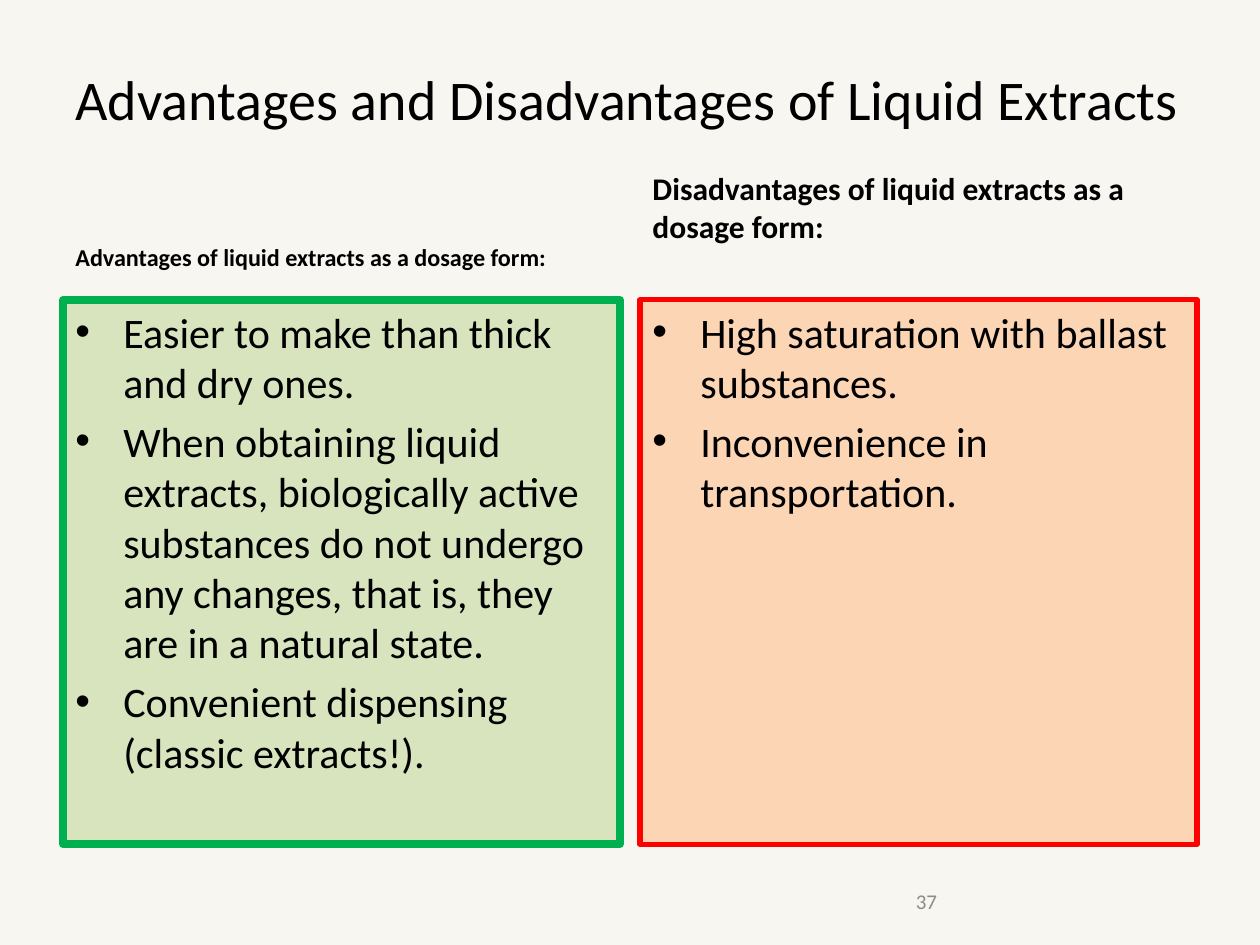
import pptx
import pptx.util
import pptx.dml.color
import pptx.enum.shapes
import pptx.enum.text
from lxml import etree

WIDTH, HEIGHT = 10, 7.5
MARGIN = 0.05 * WIDTH
GAP = 0.016 * WIDTH
COLUMN = (WIDTH - 2 * MARGIN - GAP) / 2
PANEL_TOP, PANEL_HEIGHT = 2.38, 4.32
INDENT = 0.38
FONT = "Calibri"
ANCHOR = pptx.enum.text.MSO_ANCHOR

COLUMNS = [
    dict(
        heading="Advantages of liquid extracts as a dosage form:",
        heading_size=13.8, heading_height=0.82, heading_lift=0.23,
        fill="D7E4BD", border="00B050", border_width=4.5,
        points=[
            "Easier to make than thick and dry ones.",
            "When obtaining liquid extracts, biologically active substances "
            "do not undergo any changes, that is, they are in a natural state.",
            "Convenient dispensing (classic extracts!).",
        ],
    ),
    dict(
        heading="Disadvantages of liquid extracts as a dosage form:",
        heading_size=18, heading_height=0.7, heading_lift=0.44,
        fill="FCD5B5", border="FF0000", border_width=3,
        points=[
            "High saturation with ballast substances.",
            "Inconvenience in transportation.",
        ],
    ),
]


def color(value):
    return pptx.dml.color.RGBColor.from_string(value)


def inches(*values):
    return [pptx.util.Inches(value) for value in values]


def add_bullet(para):
    properties = para._p.get_or_add_pPr()
    properties.set("marL", str(pptx.util.Inches(INDENT)))
    properties.set("indent", str(-pptx.util.Inches(INDENT)))
    namespace = properties.nsmap["a"]
    font = etree.SubElement(properties, f"{{{namespace}}}buFont")
    font.set("typeface", "Arial")
    mark = etree.SubElement(properties, f"{{{namespace}}}buChar")
    mark.set("char", "•")


def write_text(shape, lines, size, fill="000000", bold=False,
               anchor=ANCHOR.TOP, bottom=0.05, bullets=False):
    frame = shape.text_frame
    frame.word_wrap = True
    frame.auto_size = pptx.enum.text.MSO_AUTO_SIZE.NONE
    frame.vertical_anchor = anchor
    frame.margin_bottom = pptx.util.Inches(bottom)
    for number, line in enumerate(lines):
        para = frame.add_paragraph() if number else frame.paragraphs[0]
        para.alignment = pptx.enum.text.PP_ALIGN.LEFT
        if bullets:
            para.space_before = pptx.util.Pt(0.2 * size)
            add_bullet(para)
        span = para.add_run()
        span.text = line
        span.font.name = FONT
        span.font.size = pptx.util.Pt(size)
        span.font.bold = bold
        span.font.color.rgb = color(fill)


def place_title(page, left, top, width, height):
    title = page.shapes.title
    title.left, title.top, title.width, title.height = inches(left, top, width, height)
    write_text(title, ["Advantages and Disadvantages of Liquid Extracts"], 32,
               anchor=ANCHOR.MIDDLE)


def add_column(page, left, top, width, height, content):
    """Place a bordered bullet panel with its heading standing on top of it."""
    heading_height = content["heading_height"]
    heading = page.shapes.add_textbox(
        *inches(left, top - heading_height, width, heading_height))
    write_text(heading, [content["heading"]], content["heading_size"], bold=True,
               anchor=ANCHOR.BOTTOM, bottom=content["heading_lift"])

    panel = page.shapes.add_shape(
        pptx.enum.shapes.MSO_SHAPE.RECTANGLE, *inches(left, top, width, height))
    panel.shadow.inherit = False
    panel.fill.solid()
    panel.fill.fore_color.rgb = color(content["fill"])
    panel.line.color.rgb = color(content["border"])
    panel.line.width = pptx.util.Pt(content["border_width"])
    write_text(panel, content["points"], 24, bullets=True)


def add_page_number(page, left, top, width, height):
    number = page.shapes.add_textbox(*inches(left, top, width, height))
    write_text(number, ["37"], 12, fill="8C8C8C", anchor=ANCHOR.MIDDLE)


def main():
    deck = pptx.Presentation()
    deck.slide_width, deck.slide_height = inches(WIDTH, HEIGHT)
    page = deck.slides.add_slide(deck.slide_layouts.get_by_name("Title Only"))
    page.background.fill.solid()
    page.background.fill.fore_color.rgb = color("F7F6F0")

    place_title(page, MARGIN, 0, WIDTH - 2 * MARGIN, 1.55)
    for index, content in enumerate(COLUMNS):
        left = MARGIN + index * (COLUMN + GAP)
        add_column(page, left, PANEL_TOP, COLUMN, PANEL_HEIGHT, content)
    number_width = 2.33
    add_page_number(page, WIDTH - MARGIN - number_width, 6.95, number_width, 0.4)
    deck.save("out.pptx")


if __name__ == "__main__":
    main()
